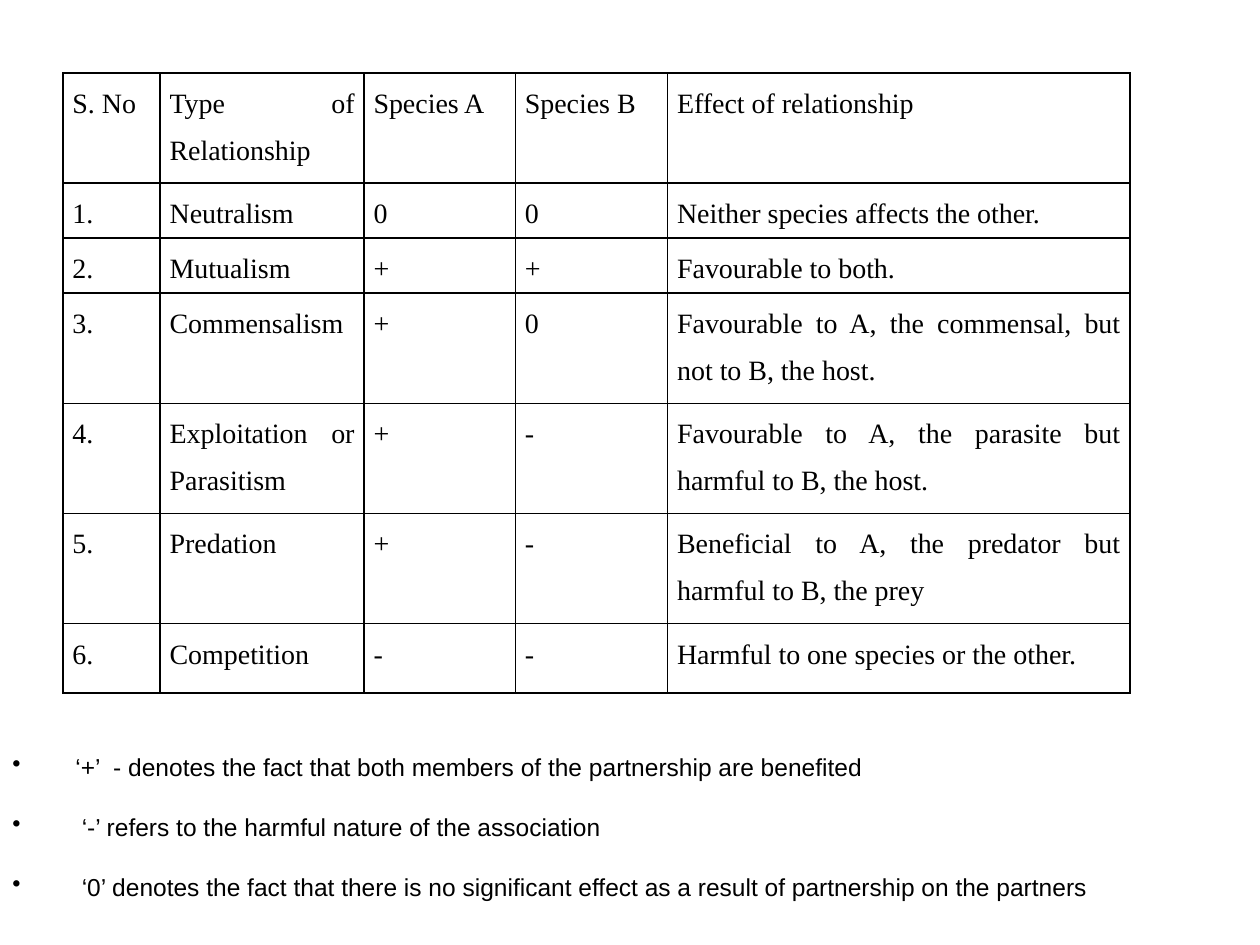
import dataclasses

import lxml.etree
import pptx
import pptx.dml.color
import pptx.enum.text
import pptx.oxml.ns
import pptx.util

Cm = pptx.util.Cm
Pt = pptx.util.Pt
qn = pptx.oxml.ns.qn
JUSTIFY = pptx.enum.text.PP_ALIGN.JUSTIFY


@dataclasses.dataclass
class Theme:
    ink: str = "000000"
    table_font: str = "Times New Roman"
    table_size: int = 16
    note_font: str = "Arial"
    note_size: int = 14
    border: float = 1


class PageBuilder:
    def __init__(self, theme, page):
        self.theme = theme
        self.page = page

    def style(self, para, font, size):
        para.alignment = JUSTIFY
        para.font.name = font
        para.font.size = Pt(size)
        para.font.color.rgb = pptx.dml.color.RGBColor.from_string(self.theme.ink)

    def outline(self, cell):
        properties = cell._tc.get_or_add_tcPr()
        for position, side in enumerate(("lnL", "lnR", "lnT", "lnB")):
            line = lxml.etree.Element(qn(f"a:{side}"), w=str(Pt(self.theme.border)))
            fill = lxml.etree.SubElement(line, qn("a:solidFill"))
            lxml.etree.SubElement(fill, qn("a:srgbClr"), val=self.theme.ink)
            properties.insert(position, line)

    def cell(self, cell, text):
        cell.margin_left = cell.margin_right = Cm(0.19)
        cell.margin_top = cell.margin_bottom = 0
        cell.fill.background()
        self.outline(cell)
        para = cell.text_frame.paragraphs[0]
        para.text = text
        para.line_spacing = 1.5
        self.style(para, self.theme.table_font, self.theme.table_size)

    def table(self, left, top, widths, heights, rows):
        table = self.page.shapes.add_table(
            len(rows), len(widths), Cm(left), Cm(top),
            Cm(sum(widths)), Cm(sum(heights))).table
        table.first_row = table.horz_banding = False
        for column, width in zip(table.columns, widths):
            column.width = Cm(width)
        for row, height, texts in zip(table.rows, heights, rows):
            row.height = Cm(height)
            for cell, text in zip(row.cells, texts):
                self.cell(cell, text)

    def bullets(self, left, top, width, height, items, gap):
        box = self.page.shapes.add_textbox(Cm(left), Cm(top), Cm(width), Cm(height))
        frame = box.text_frame
        frame.word_wrap = True
        frame.vertical_anchor = pptx.enum.text.MSO_ANCHOR.MIDDLE
        for index, (indent, text) in enumerate(items):
            para = frame.add_paragraph() if index else frame.paragraphs[0]
            para.text = text
            para.space_before = Pt(gap if index else 0)
            self.style(para, self.theme.note_font, self.theme.note_size)
            properties = para._p.get_or_add_pPr()
            properties.set("marL", str(Cm(indent)))
            properties.set("indent", str(-Cm(indent)))
            bullet = lxml.etree.Element(qn("a:buChar"), char="•")
            properties.find(qn("a:defRPr")).addprevious(bullet)


RELATIONSHIPS = [
    ("S. No", "Type of Relationship", "Species A", "Species B", "Effect of relationship"),
    ("1.", "Neutralism", "0", "0", "Neither species affects the other."),
    ("2.", "Mutualism", "+", "+", "Favourable to both."),
    ("3.", "Commensalism", "+", "0",
     "Favourable to A, the commensal, but not to B, the host."),
    ("4.", "Exploitation or Parasitism", "+", "-",
     "Favourable to A, the parasite but harmful to B, the host."),
    ("5.", "Predation", "+", "-",
     "Beneficial to A, the predator but harmful to B, the prey"),
    ("6.", "Competition", "-", "-", "Harmful to one species or the other."),
]

# Indent in centimetres, then the wording
SYMBOL_NOTES = [
    (1.27, "‘+’  - denotes the fact that both members of the partnership are benefited"),
    (1.4, "‘-’ refers to the harmful nature of the association"),
    (1.4, "‘0’ denotes the fact that there is no significant effect as a result of "
          "partnership on the partners"),
]


def main():
    deck = pptx.Presentation()
    deck.slide_width, deck.slide_height = Cm(25.4), Cm(19.05)
    builder = PageBuilder(Theme(), deck.slides.add_slide(deck.slide_layouts[6]))

    # Relationship table: single-line, double-line and closing row heights
    single, double, closing = 1.11, 2.22, 1.4
    builder.table(1.27, 1.47, [1.96, 4.11, 3.05, 3.07, 9.32],
                  [double, single, single, double, double, double, closing],
                  RELATIONSHIPS)

    # Key to the symbols
    builder.bullets(0, 15.04, 23.29, 3.25, SYMBOL_NOTES, gap=17.3)

    deck.save("out.pptx")


if __name__ == "__main__":
    main()
